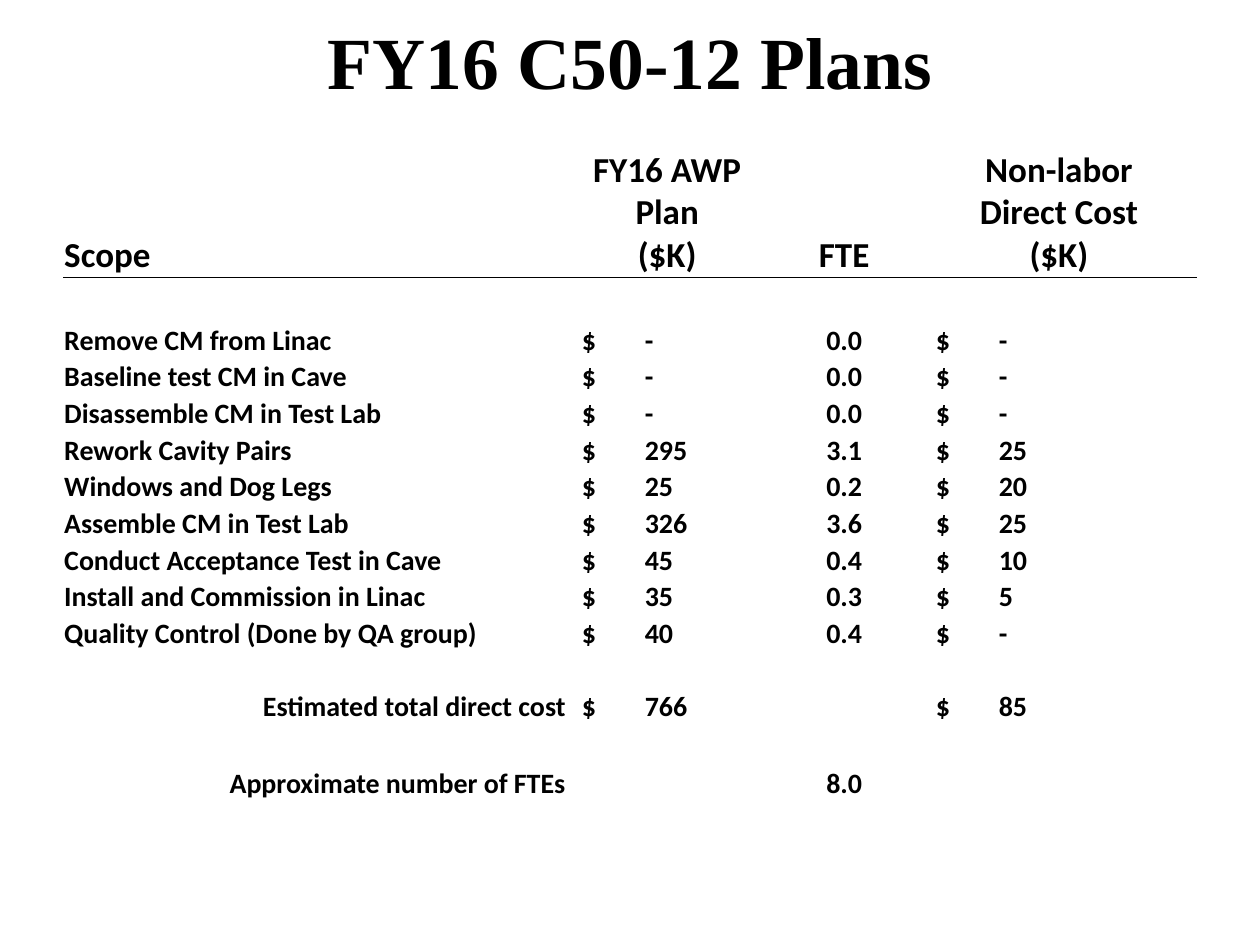
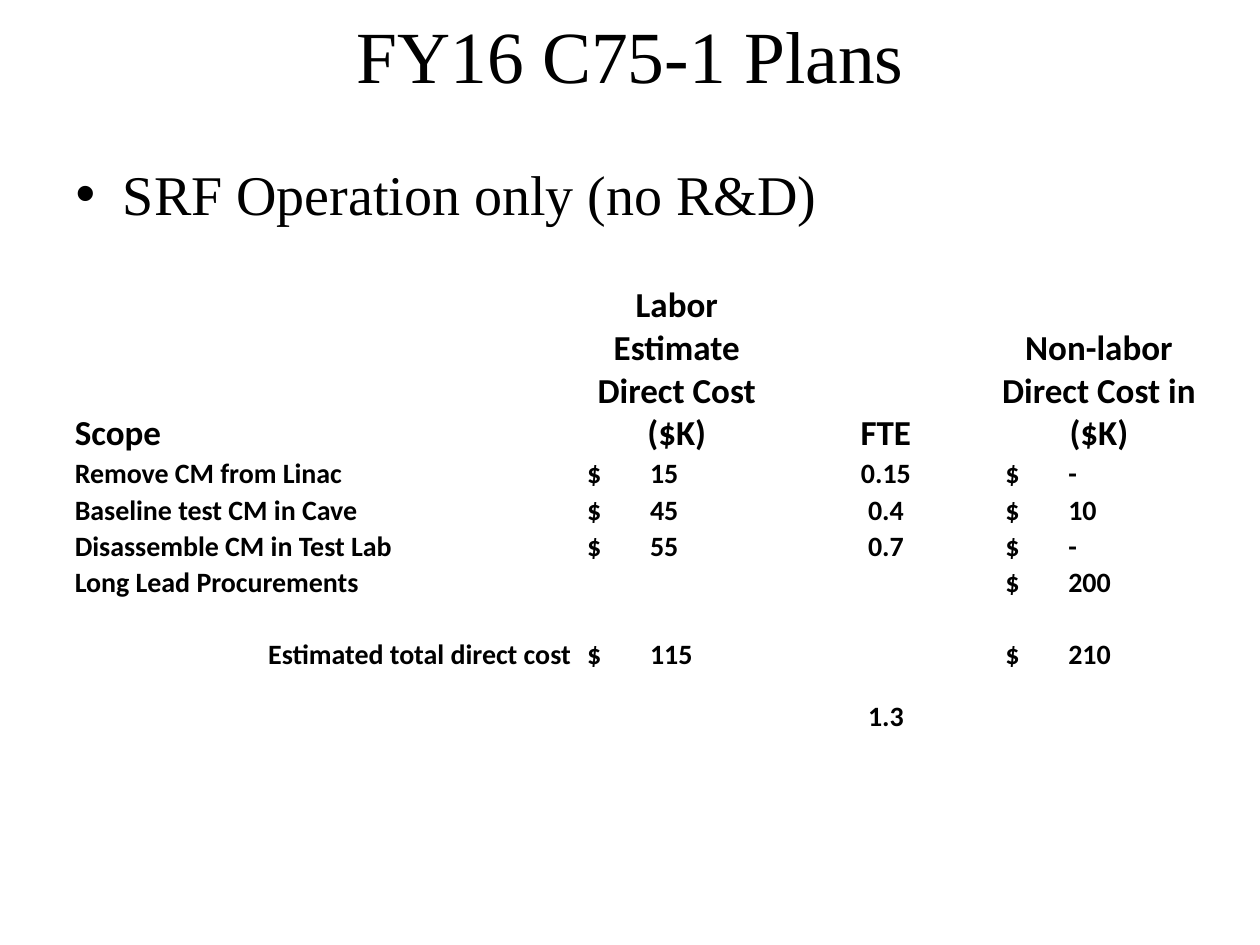
from lxml.etree import SubElement
from pptx import Presentation
from pptx.dml.color import RGBColor
from pptx.enum.text import MSO_ANCHOR as Anchor, MSO_AUTO_SIZE as AutoSize, PP_ALIGN as Align
from pptx.oxml.ns import qn
from pptx.util import Pt

COLORS = {"ink": "000000"}
SERIF, SANS = "Times New Roman", "Calibri"
PLAIN_TABLE_STYLE = "{2D5ABB26-0587-4C30-8999-92F81FD0307C}"
LEFT, WIDTH = 36, 648
DOLLAR_INSET = 8.5   # gap between the column edge and the dollar sign
DASH_INSET = 8.5     # a dash stands this far left of the last digit
TITLE_ONLY, TITLE_AND_BODY = 5, 1

# Each row: scope, plan cost, FTE, non-labor cost; None is a spacer row
C50_HEADER = ("Scope", "FY16 AWP Plan\n($K)", "FTE", "Non-labor\vDirect Cost\v($K)")
C50_ROWS = [
    None,
    ("Remove CM from Linac", "-", "0.0", "-"),
    ("Baseline test CM in Cave", "-", "0.0", "-"),
    ("Disassemble CM in Test Lab", "-", "0.0", "-"),
    ("Rework Cavity Pairs", "295", "3.1", "25"),
    ("Windows and Dog Legs", "25", "0.2", "20"),
    ("Assemble CM in Test Lab", "326", "3.6", "25"),
    ("Conduct Acceptance Test in Cave", "45", "0.4", "10"),
    ("Install and Commission in Linac", "35", "0.3", "5"),
    ("Quality Control (Done by QA group)", "40", "0.4", "-"),
    None,
    ("Estimated total direct cost", "766", "", "85"),
    None,
    ("Approximate number of FTEs", "", "8.0", ""),
]
C75_HEADER = ("Scope", "Labor Estimate\vDirect Cost\v($K)", "FTE",
              "Non-labor\vDirect Cost in ($K)")
C75_ROWS = [
    ("Remove CM from Linac", "15", "0.15", "-"),
    ("Baseline test CM in Cave", "45", "0.4", "10"),
    ("Disassemble CM in Test Lab", "55", "0.7", "-"),
    ("Long Lead Procurements", "", "", "200"),
    None,
    ("Estimated total direct cost", "115", "", "210"),
    None,
    ("", "", "1.3", ""),
]
SUMMARY_LABELS = ("Estimated total direct cost", "Approximate number of FTEs")


def style_font(para, name, size, bold=False):
    para.font.name = name
    para.font.size = Pt(size)
    para.font.bold = bold
    para.font.color.rgb = RGBColor.from_string(COLORS["ink"])


def fill_placeholder(box, text, top, height, size, bold=False):
    box.left, box.top, box.width, box.height = Pt(LEFT), Pt(top), Pt(WIDTH), Pt(height)
    frame = box.text_frame
    frame.text = text
    frame.auto_size = AutoSize.NONE
    para = frame.paragraphs[0]
    para.space_before = Pt(0)
    style_font(para, SERIF, size, bold)
    return frame, para


def add_title(page, text, height, bold=False):
    frame, para = fill_placeholder(page.shapes.title, text, 15, height, 42, bold)
    frame.vertical_anchor = Anchor.MIDDLE
    para.alignment = Align.CENTER


def add_bullet(page, text):
    frame, _ = fill_placeholder(page.placeholders[1], text, 84, 398, 32)
    frame.margin_top = Pt(7)


def write_cell(cell, text, size, align):
    cell.fill.background()
    cell.vertical_anchor = Anchor.BOTTOM
    cell.margin_left = cell.margin_right = cell.margin_top = Pt(0.72)
    cell.margin_bottom = Pt(0)
    cell.text_frame.text = text
    for para in cell.text_frame.paragraphs:
        para.alignment = align
        style_font(para, SANS, size, True)


def write_blank(cell):
    write_cell(cell, "", 10, Align.LEFT)
    ending = cell.text_frame.paragraphs[0]._p.get_or_add_endParaRPr()
    ending.set("sz", "1000")


def write_amount(cell, amount, width, edge):
    """Dollar sign at the left, figure against a right tab stop."""
    cell.text_frame.text = f"$\t{amount}"
    stop = width - DOLLAR_INSET - edge - (DASH_INSET if amount == "-" else 0)
    props = cell.text_frame.paragraphs[0]._p.get_or_add_pPr()
    tabs = SubElement(props, qn("a:tabLst"))
    SubElement(tabs, qn("a:tab"), pos=str(Pt(stop)), algn="r")
    write_cell(cell, f"$\t{amount}", 16, Align.LEFT)
    cell.margin_left = Pt(DOLLAR_INSET)


def rule_below(cell):
    props = cell._tc.get_or_add_tcPr()
    line = props.makeelement(qn("a:lnB"), {"w": str(Pt(1))})
    fill = SubElement(line, qn("a:solidFill"))
    SubElement(fill, qn("a:srgbClr"), val=COLORS["ink"])
    props.insert(0, line)


def add_cost_table(page, left, top, header, rows, widths, heights, edge, ruled=False):
    frame = page.shapes.add_table(len(rows) + 1, len(widths), Pt(left), Pt(top),
                                  Pt(sum(widths)), Pt(sum(heights)))
    table = frame.table
    table.first_row = table.horz_banding = False
    table._tbl.tblPr.find(qn("a:tableStyleId")).text = PLAIN_TABLE_STYLE
    for column, width in zip(table.columns, widths):
        column.width = Pt(width)
    for row, height in zip(table.rows, heights):
        row.height = Pt(height)

    # Header row
    for index, text in enumerate(header):
        cell = table.cell(0, index)
        write_cell(cell, text, 20, Align.CENTER if index else Align.LEFT)
        if ruled:
            rule_below(cell)

    # Scope and total rows
    for number, values in enumerate(rows, start=1):
        for index, text in enumerate(values or [""] * len(widths)):
            cell = table.cell(number, index)
            if not text:
                write_blank(cell)
            elif index == 0:
                write_cell(cell, text, 16,
                           Align.RIGHT if text in SUMMARY_LABELS else Align.LEFT)
            elif index == 2:
                write_cell(cell, text, 16, Align.CENTER)
            else:
                write_amount(cell, text, widths[index], edge)


def main():
    deck = Presentation()
    deck.slide_width, deck.slide_height = Pt(720), Pt(540)

    # C50-12 plan
    page = deck.slides.add_slide(deck.slide_layouts[TITLE_ONLY])
    add_title(page, "FY16 C50-12 Plans", 39, bold=True)
    add_cost_table(page, LEFT, 84.25, C50_HEADER, C50_ROWS,
                   widths=[288, 114.5, 87.8, 157.7],
                   heights=[74, 25] + [20.95] * 12 + [23], edge=9.5, ruled=True)

    # C75-1 plan
    page = deck.slides.add_slide(deck.slide_layouts[TITLE_AND_BODY])
    add_title(page, "FY16 C75-1 Plans", 32)
    add_bullet(page, "SRF Operation only (no R&D)")
    add_cost_table(page, 42, 156.25, C75_HEADER, C75_ROWS,
                   widths=[285, 119.5, 119.5, 124],
                   heights=[104] + [20.65] * 6 + [15, 20.65], edge=7.5)

    deck.save("out.pptx")


if __name__ == "__main__":
    main()
